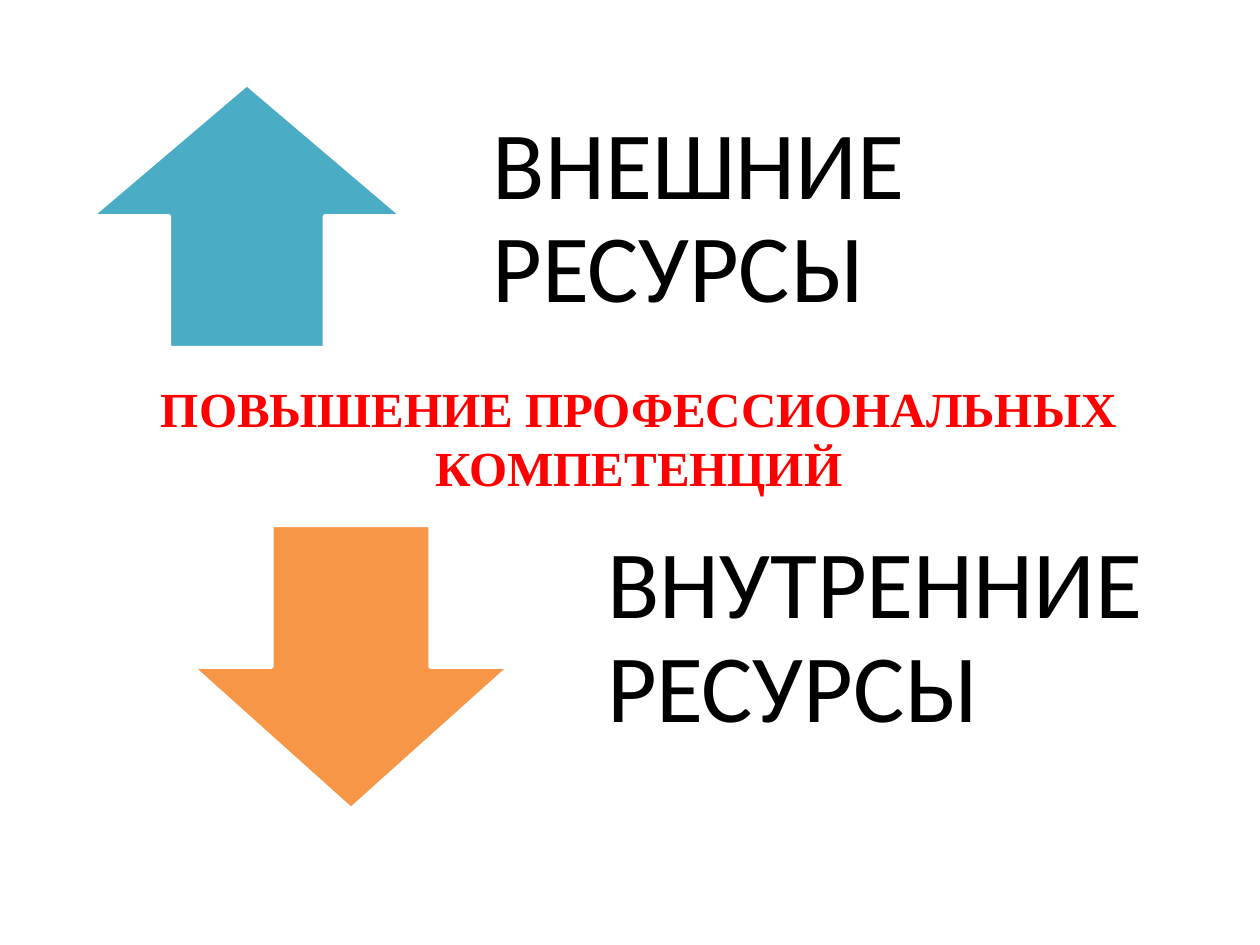
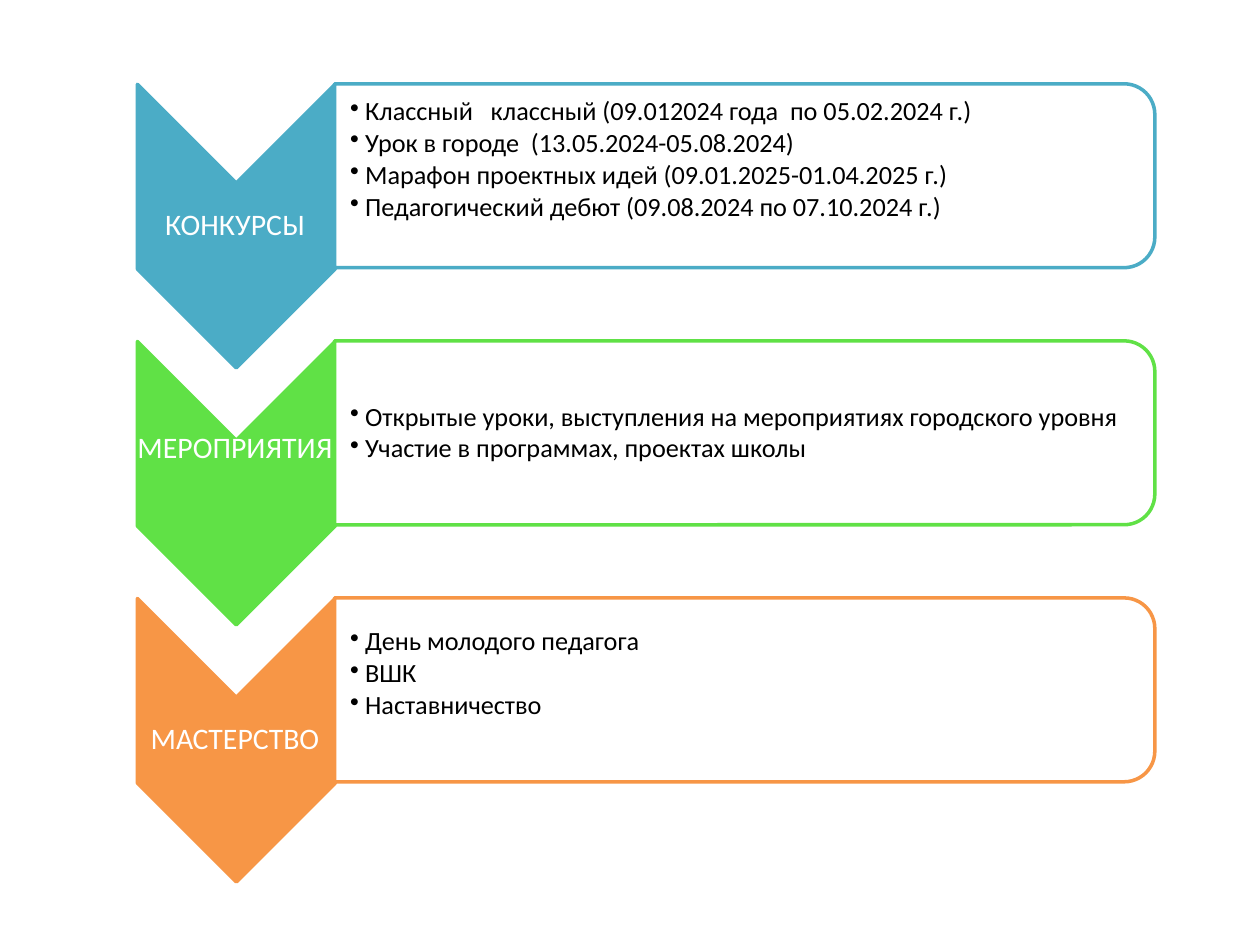
from dataclasses import dataclass
from typing import NamedTuple

from lxml.etree import SubElement
from pptx import Presentation
from pptx.dml.color import RGBColor
from pptx.enum.shapes import MSO_SHAPE
from pptx.enum.text import MSO_ANCHOR, PP_ALIGN
from pptx.oxml.ns import qn
from pptx.shapes.autoshape import Shape
from pptx.slide import Slide
from pptx.text.text import _Paragraph
from pptx.util import Pt


@dataclass(frozen=True)
class Theme:
    teal: str = "4BACC6"
    green: str = "60E146"
    orange: str = "F79646"
    red: str = "FF0000"
    white: str = "FFFFFF"
    black: str = "000000"
    body_font: str = "Calibri"
    title_font: str = "Times New Roman"
    title_size: float = 28
    heading_size: float = 55
    label_size: float = 17
    list_size: float = 15
    line_width: float = 2
    line_spacing: float = 0.9


THEME = Theme()


class Box(NamedTuple):
    """A frame in points."""
    left: float
    top: float
    width: float
    height: float

    def down(self, distance: float) -> "Box":
        return self._replace(top=self.top + distance)


class Insets(NamedTuple):
    left: float = 0
    top: float = 0
    right: float = 0
    bottom: float = 0


class Resource(NamedTuple):
    heading: str
    arrow: MSO_SHAPE
    color: str
    arrow_box: Box
    heading_box: Box


class Direction(NamedTuple):
    label: str
    color: str
    items: tuple[str, ...]
    label_lift: float = 0
    list_bottom: float = 0.7


TITLE = "ПОВЫШЕНИЕ ПРОФЕССИОНАЛЬНЫХ КОМПЕТЕНЦИЙ"
TITLE_BOX = Box(10, 216, 710, 67.7)
HEADING_INSETS = Insets(31, 0, 31, 31)
RESOURCES = (
    Resource("ВНЕШНИЕ РЕСУРСЫ", MSO_SHAPE.UP_ARROW, THEME.teal,
             Box(52.6, 48.2, 177, 150.5), Box(250.6, 30.2, 369.5, 221.8)),
    Resource("ВНУТРЕННИЕ РЕСУРСЫ", MSO_SHAPE.DOWN_ARROW, THEME.orange,
             Box(110.2, 300.2, 180.7, 162), Box(316, 270, 369.5, 221.8)),
)

ROW_STEP = 146.9
CHEVRON_BOX = Box(54, 72.7, 162, 113)
LABEL_BOX = Box(77.8, 105.1, 113, 48.2)
PANEL_BOX = Box(373, -133.9, 105.1, 468.7)
LIST_BOX = Box(191.5, 53.3, 463.7, 95)
LIST_INDENT = 8.6
ROOM_BELOW = 19.2
DIRECTIONS = (
    Direction("КОНКУРСЫ", THEME.teal, (
        "Классный   классный (09.012024 года  по 05.02.2024 г.)",
        "Урок в городе  (13.05.2024-05.08.2024)",
        "Марафон проектных идей (09.01.2025-01.04.2025 г.)",
        "Педагогический дебют (09.08.2024 по 07.10.2024 г.)",
    ), list_bottom=ROOM_BELOW),
    Direction("МЕРОПРИЯТИЯ", THEME.green, (
        "Открытые уроки, выступления на мероприятиях городского уровня",
        "Участие в программах, проектах школы",
    ), label_lift=19.5),
    Direction("МАСТЕРСТВО", THEME.orange, (
        "День молодого педагога",
        "ВШК",
        "Наставничество",
    ), list_bottom=ROOM_BELOW),
)


def points(box: Box) -> list[Pt]:
    return [Pt(v) for v in box]


def rgb(color: str) -> RGBColor:
    return RGBColor.from_string(color)


def add_figure(slide: Slide, kind: MSO_SHAPE, box: Box, fill: str, line: str,
               rotation: float = 0) -> Shape:
    sp = slide.shapes.add_shape(kind, *points(box))
    sp.rotation = rotation
    sp.shadow.inherit = False
    sp.fill.solid()
    sp.fill.fore_color.rgb = rgb(fill)
    sp.line.color.rgb = rgb(line)
    sp.line.width = Pt(THEME.line_width)
    return sp


def add_bullet(p: _Paragraph) -> None:
    props = p._p.get_or_add_pPr()
    props.set("marL", str(Pt(LIST_INDENT)))
    props.set("indent", str(-Pt(LIST_INDENT)))
    SubElement(props, qn("a:buChar")).set("char", "•")


def add_text(slide: Slide, box: Box, lines: tuple[str, ...], size: float, color: str,
             insets: Insets = Insets(), align: PP_ALIGN = PP_ALIGN.LEFT,
             font: str = THEME.body_font, bold: bool = False,
             spacing: float = THEME.line_spacing, bulleted: bool = False) -> None:
    tf = slide.shapes.add_textbox(*points(box)).text_frame
    tf.word_wrap = True
    tf.vertical_anchor = MSO_ANCHOR.MIDDLE
    tf.margin_left, tf.margin_top, tf.margin_right, tf.margin_bottom = (Pt(v) for v in insets)
    for i, line in enumerate(lines):
        p = tf.add_paragraph() if i else tf.paragraphs[0]
        p.alignment = align
        p.line_spacing = spacing
        if bulleted:
            p.space_after = Pt(2)
            add_bullet(p)
        r = p.add_run()
        r.text = line
        r.font.name = font
        r.font.size = Pt(size)
        r.font.bold = bold
        r.font.color.rgb = rgb(color)


def draw_resource(slide: Slide, res: Resource) -> None:
    add_figure(slide, res.arrow, res.arrow_box, res.color, THEME.white)
    add_text(slide, res.heading_box, (res.heading,), THEME.heading_size, THEME.black,
             HEADING_INSETS)


def draw_direction(slide: Slide, item: Direction, offset: float) -> None:
    """Draw one row: a chevron with its label, and a panel with its list."""
    add_figure(slide, MSO_SHAPE.CHEVRON, CHEVRON_BOX.down(offset), item.color, item.color, 90)
    add_text(slide, LABEL_BOX.down(offset - item.label_lift), (item.label,),
             THEME.label_size, THEME.white, Insets(0.5, 0.7, 0.5, 0.7), PP_ALIGN.CENTER)
    add_figure(slide, MSO_SHAPE.ROUND_2_SAME_RECTANGLE, PANEL_BOX.down(offset),
               THEME.white, item.color, 90)
    add_text(slide, LIST_BOX.down(offset), item.items, THEME.list_size, THEME.black,
             Insets(8.6, 0.7, 0.7, item.list_bottom), bulleted=True)


def main() -> None:
    prs = Presentation()
    prs.slide_width, prs.slide_height = Pt(720), Pt(540)
    blank = prs.slide_layouts[6]

    resources = prs.slides.add_slide(blank)
    add_text(resources, TITLE_BOX, (TITLE,), THEME.title_size, THEME.red,
             align=PP_ALIGN.CENTER, font=THEME.title_font, bold=True, spacing=1.0)
    for res in RESOURCES:
        draw_resource(resources, res)

    directions = prs.slides.add_slide(blank)
    for row, item in enumerate(DIRECTIONS):
        draw_direction(directions, item, row * ROW_STEP)

    prs.save("out.pptx")


if __name__ == "__main__":
    main()
